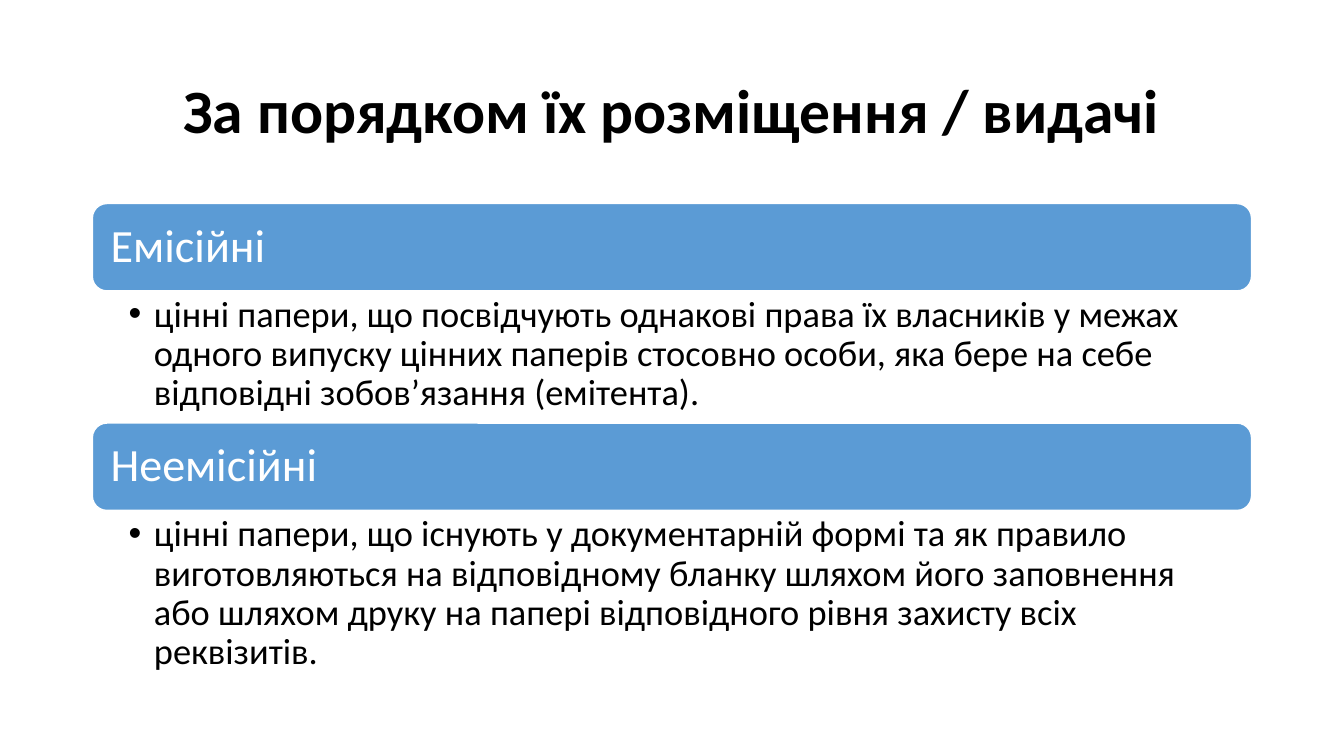
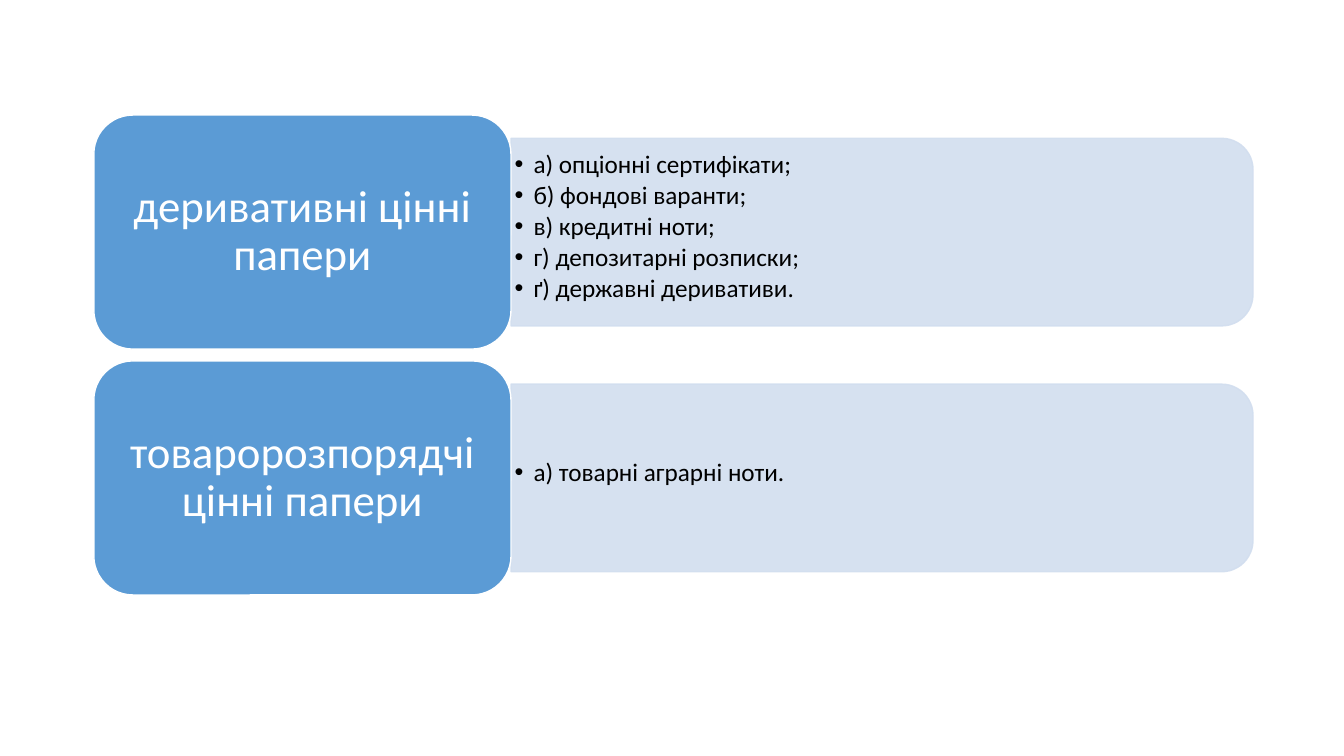
import pptx
import pptx.dml.color
import pptx.enum.shapes
import pptx.enum.text
import pptx.oxml.ns
import pptx.util
from lxml import etree

Pt = pptx.util.Pt
SHAPE = pptx.enum.shapes.MSO_SHAPE
ANCHOR = pptx.enum.text.MSO_ANCHOR
ALIGN = pptx.enum.text.PP_ALIGN
qn = pptx.oxml.ns.qn

# Content
TITLE = "За порядком їх розміщення / видачі"
PLACEMENT_TYPES = [  # heading, description, description height
    ("Емісійні",
     "цінні папери, що посвідчують однакові права їх власників у межах одного випуску "
     "цінних паперів стосовно особи, яка бере на себе відповідні зобов’язання (емітента).",
     94.4),
    ("Неемісійні",
     "цінні папери, що існують у документарній формі та як правило виготовляються на "
     "відповідному бланку шляхом його заповнення або шляхом друку на папері "
     "відповідного рівня захисту всіх реквізитів.",
     121),
]
SECURITY_GROUPS = [
    ("деривативні цінні папери",
     ["а) опціонні сертифікати;", "б) фондові варанти;", "в) кредитні ноти;",
      "г) депозитарні розписки;", "ґ) державні деривативи."]),
    ("товаророзпорядчі цінні папери", ["а) товарні аграрні ноти."]),
]

# Shared style
FONT = "Calibri"
COLORS = {"text": "000000", "light": "FFFFFF", "block": "5B9BD5", "panel": "D2DEEF"}
PANEL_OPACITY = 90
CORNER = 0.1667
LEFT, WIDTH = 66, 828


def rgb(name):
    return pptx.dml.color.RGBColor.from_string(COLORS[name])


def write(frame, texts, size, color, align=ALIGN.LEFT, anchor=ANCHOR.MIDDLE,
          insets=(7.2, 3.6, 7.2, 3.6), after=0, bullet_indent=0, bold=False):
    frame.word_wrap = True
    frame.auto_size = pptx.enum.text.MSO_AUTO_SIZE.NONE
    frame.vertical_anchor = anchor
    (frame.margin_left, frame.margin_top,
     frame.margin_right, frame.margin_bottom) = map(Pt, insets)
    frame.text = "\n".join(texts)
    for paragraph in frame.paragraphs:
        if bullet_indent:
            properties = paragraph._p.get_or_add_pPr()
            properties.set("marL", str(Pt(bullet_indent)))
            properties.set("indent", str(-Pt(bullet_indent)))
            etree.SubElement(properties, qn("a:buFont")).set("typeface", "Arial")
            etree.SubElement(properties, qn("a:buChar")).set("char", "•")
        paragraph.alignment = align
        paragraph.line_spacing = 0.9
        paragraph.space_after = Pt(after)
        for run in paragraph.runs:
            run.font.name = FONT
            run.font.size = Pt(size)
            run.font.bold = bold
            run.font.color.rgb = rgb(color)


def add_filled(slide, kind, box, fill, line):
    shape = slide.shapes.add_shape(kind, *map(Pt, box))
    shape.shadow.inherit = False
    shape.adjustments[0] = CORNER
    shape.fill.solid()
    shape.fill.fore_color.rgb = rgb(fill)
    shape.line.color.rgb = rgb(line)
    shape.line.width = Pt(1)
    return shape


def add_block(slide, box, text, size, **style):
    block = add_filled(slide, SHAPE.ROUNDED_RECTANGLE, box, "block", "light")
    write(block.text_frame, [text], size, "light", **style)


def add_bullets(slide, box, texts, size, **style):
    text_box = slide.shapes.add_textbox(*map(Pt, box))
    write(text_box.text_frame, texts, size, "text", **style)


def add_panel(slide, left, top, width, height):
    """Panel with rounded right corners: a shape with rounded top, turned by 90 degrees."""
    box = (left + (width - height) / 2, top + (height - width) / 2, height, width)
    panel = add_filled(slide, SHAPE.ROUND_2_SAME_RECTANGLE, box, "panel", "panel")
    panel.rotation = 90
    for color in panel._element.spPr.iter(qn("a:srgbClr")):
        etree.SubElement(color, qn("a:alpha")).set("val", str(PANEL_OPACITY * 1000))


def build_placement_slide(presentation):
    slide = presentation.slides.add_slide(presentation.slide_layouts[5])
    title = slide.shapes.title
    title.left, title.top, title.width, title.height = map(Pt, (LEFT, 28.8, WIDTH, 104.4))
    write(title.text_frame, [TITLE], 44, "text", align=ALIGN.CENTER, bold=True)

    # Headings and descriptions stacked without gaps
    top, heading_height = 145.4, 62.4
    for heading, description, height in PLACEMENT_TYPES:
        add_block(slide, (LEFT, top, WIDTH, heading_height), heading, 33,
                  insets=(10, 10, 10, 10), after=11.5)
        top += heading_height
        add_bullets(slide, (LEFT, top, WIDTH, height), [description], 26,
                    anchor=ANCHOR.TOP, insets=(26, 3.6, 18.7, 3.6), after=5.2,
                    bullet_indent=18)
        top += height


def build_groups_slide(presentation):
    slide = presentation.slides.add_slide(presentation.slide_layouts[6])
    block_left, first_top, block_width, block_height, gap = 67, 82.2, 298, 167.2, 8.4
    panel_left, panel_width, panel_height = block_left + block_width, 530, 134
    for row, (name, items) in enumerate(SECURITY_GROUPS):
        top = first_top + row * (block_height + gap)
        panel = (panel_left, top + (block_height - panel_height) / 2,
                 panel_width, panel_height)
        add_panel(slide, *panel)
        add_bullets(slide, panel, items, 18, insets=(2.6, 3.4, 10, 10), after=2.7,
                    bullet_indent=13.5)
        add_block(slide, (block_left, top, block_width, block_height), name, 32,
                  align=ALIGN.CENTER, insets=(9.4, 5, 9.4, 5), after=11.2)


def main():
    presentation = pptx.Presentation()
    presentation.slide_width, presentation.slide_height = Pt(960), Pt(540)
    build_placement_slide(presentation)
    build_groups_slide(presentation)
    presentation.save("out.pptx")


if __name__ == "__main__":
    main()
